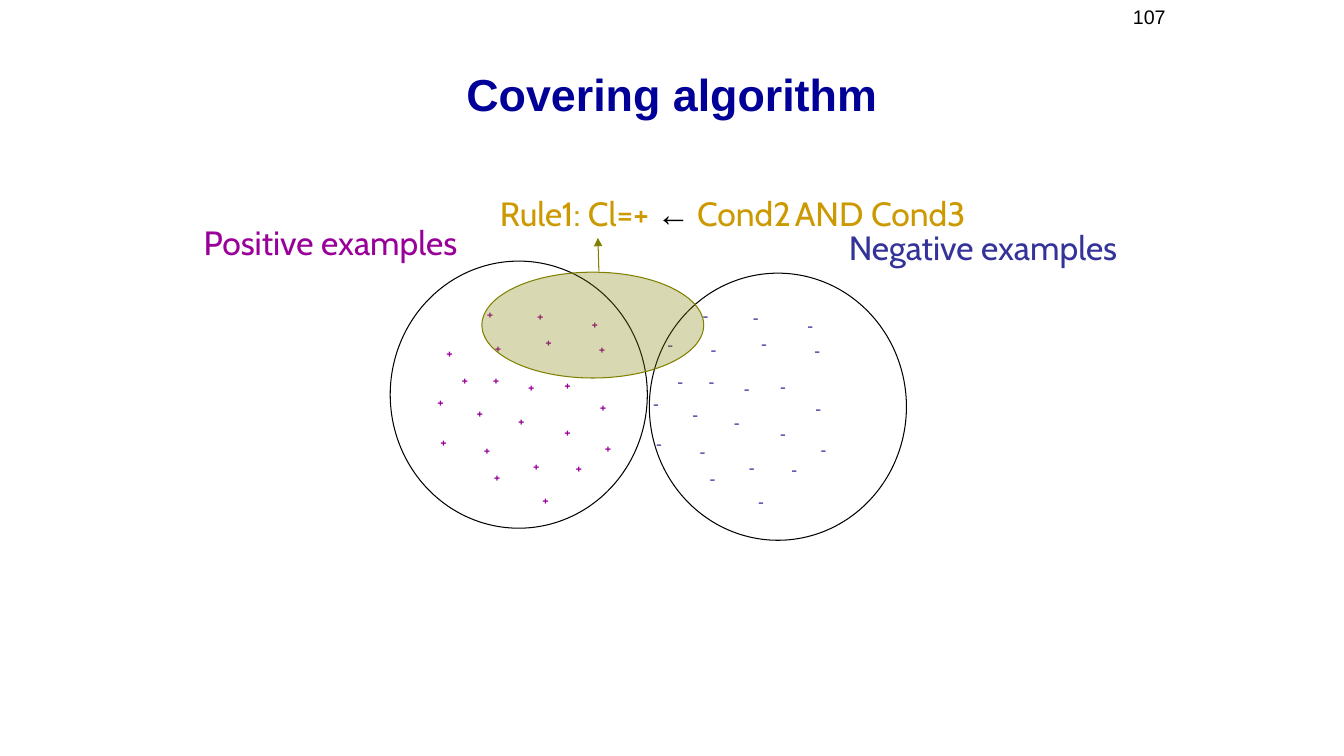
from dataclasses import dataclass

from lxml import etree
from pptx import Presentation
from pptx.dml.color import RGBColor
from pptx.enum.shapes import MSO_CONNECTOR, MSO_SHAPE
from pptx.enum.text import MSO_ANCHOR, MSO_AUTO_SIZE, PP_ALIGN
from pptx.oxml.ns import qn
from pptx.util import Inches, Pt

OVAL, LINE = MSO_SHAPE.OVAL, MSO_CONNECTOR.STRAIGHT
LEFT, MID, RIGHT = PP_ALIGN.LEFT, PP_ALIGN.CENTER, PP_ALIGN.RIGHT
TOP, LOW = MSO_ANCHOR.TOP, MSO_ANCHOR.BOTTOM
NO_FIT = MSO_AUTO_SIZE.NONE


@dataclass(frozen=True)
class Theme:
    sans: str = "Arial"
    body: str = "Cabin"
    black: str = "000000"
    navy: str = "000099"
    plus: str = "990099"
    minus: str = "333399"
    gold: str = "CC9900"
    olive: str = "808000"
    head: int = 32
    label: int = 24
    space: int = 18
    page: int = 14
    gap: int = 12
    mark: int = 10
    line: float = 0.75


THEME = Theme()

# Left and top of each plus; the minus set is the same cloud moved by SHIFT
MARKS = [
    (5.23, 3), (5.77, 3.08), (4.79, 3.64), (4.73, 2.98), (5.31, 3.26),
    (4.24, 3.85), (4.7, 4.33), (5.04, 4.04), (5.5, 3.69), (5.84, 3.33),
    (4.81, 3.32), (4.63, 3.96), (5.5, 4.15), (5.19, 4.49), (4.27, 4.25),
    (5.14, 3.71), (4.48, 3.64), (5.85, 3.9), (5.9, 4.31), (5.61, 4.51),
    (4.8, 4.6), (5.28, 4.83),
]
SHIFT = (2.14, 0.02)
ODD_PLUS, ODD_MINUS = (4.33, 3.37), (6.52, 3.29)


def style(text, size, color, name=THEME.body, bold=False):
    """One run: its text and its font format."""
    return text, {"size": Pt(size), "name": name, "bold": bold}, color


def write(shape, runs, align=LEFT, anchor=TOP):
    frame = shape.text_frame
    form = {"word_wrap": True, "auto_size": NO_FIT, "vertical_anchor": anchor,
            "margin_left": Inches(0.1), "margin_right": Inches(0.1),
            "margin_top": Inches(0.05), "margin_bottom": Inches(0.05)}
    for key, value in form.items():
        setattr(frame, key, value)
    para = frame.paragraphs[0]
    para.alignment = align
    for text, font, color in runs:
        run = para.add_run()
        run.text = text
        for key, value in font.items():
            setattr(run.font, key, value)
        run.font.color.rgb = RGBColor.from_string(color)


def add_text(slide, box, runs, align=LEFT):
    shape = slide.shapes.add_textbox(*map(Inches, box))
    write(shape, runs, align)


def add_title(slide, box, run):
    title = slide.shapes.title
    for key, value in zip(("left", "top", "width", "height"), box):
        setattr(title, key, Inches(value))
    write(title, [run], MID, LOW)


def add_marks(slide, sign, spots, width, color):
    for left, top in spots:
        add_text(slide, (left, top, width, 0.27),
                 [style(sign, THEME.mark, color, bold=True)])


def draw_line(shape, color):
    shape.line.color.rgb = RGBColor.from_string(color)
    shape.line.width = Pt(THEME.line)


def add_oval(slide, box, color, fill=None, alpha=30):
    oval = slide.shapes.add_shape(OVAL, *map(Inches, box))
    oval.shadow.inherit = False
    draw_line(oval, color)
    if fill is None:
        oval.fill.background()
        return
    oval.fill.solid()
    oval.fill.fore_color.rgb = RGBColor.from_string(fill)
    tint = oval.fill._xPr.find(qn("a:solidFill"))[0]
    etree.SubElement(tint, qn("a:alpha"), val=str(alpha * 1000))


def add_arrow(slide, start, end, color):
    arrow = slide.shapes.add_connector(LINE, *map(Inches, start + end))
    draw_line(arrow, color)
    etree.SubElement(arrow.line._get_or_add_ln(), qn("a:tailEnd"),
                     type="triangle")
    etree.SubElement(arrow._element.spPr, qn("a:effectLst"))


def main():
    deck = Presentation()
    deck.slide_width, deck.slide_height = Inches(13.33), Inches(7.5)
    slide = deck.slides.add_slide(deck.slide_layouts[5])
    t = THEME

    # Page number and title
    add_text(slide, (9.33, 0, 2.33, 0.52),
             [style("107", t.page, t.black, t.sans)], RIGHT)
    add_title(slide, (1.83, 0, 9.67, 1.25),
              style("Covering algorithm", t.head, t.navy, t.sans, True))

    # Examples of both classes
    moved = [(x + SHIFT[0], y + SHIFT[1]) for x, y in MARKS]
    add_marks(slide, "+", MARKS + [ODD_PLUS], 0.31, t.plus)
    add_marks(slide, "-", moved + [ODD_MINUS], 0.26, t.minus)

    # Class circles and their labels
    for left, top in ((3.87, 2.59), (6.44, 2.71)):
        add_oval(slide, (left, top, 2.55, 2.65), t.black)
    for text, box, color in (
            ("Positive examples", (1.92, 2.15, 2.81, 0.5), t.plus),
            ("Negative examples", (8.32, 2.2, 2.97, 0.5), t.minus)):
        add_text(slide, box, [style(text, t.label, color)])

    # Rule and the region it covers
    add_oval(slide, (4.78, 2.7, 2.2, 1.05), t.olive, t.olive)
    add_text(slide, (4.86, 1.86, 6.81, 0.5), [
        style("Rule1: Cl=+ ", t.label, t.gold),
        style("←", t.label, t.black, t.sans, True),
        style(" ", t.space, t.black, t.sans),
        style("Cond2", t.label, t.gold),
        style(" ", t.gap, t.gold),
        style("AND Cond3", t.label, t.gold)])
    add_arrow(slide, (5.94, 2.69), (5.93, 2.36), t.olive)

    deck.save("out.pptx")


if __name__ == "__main__":
    main()
